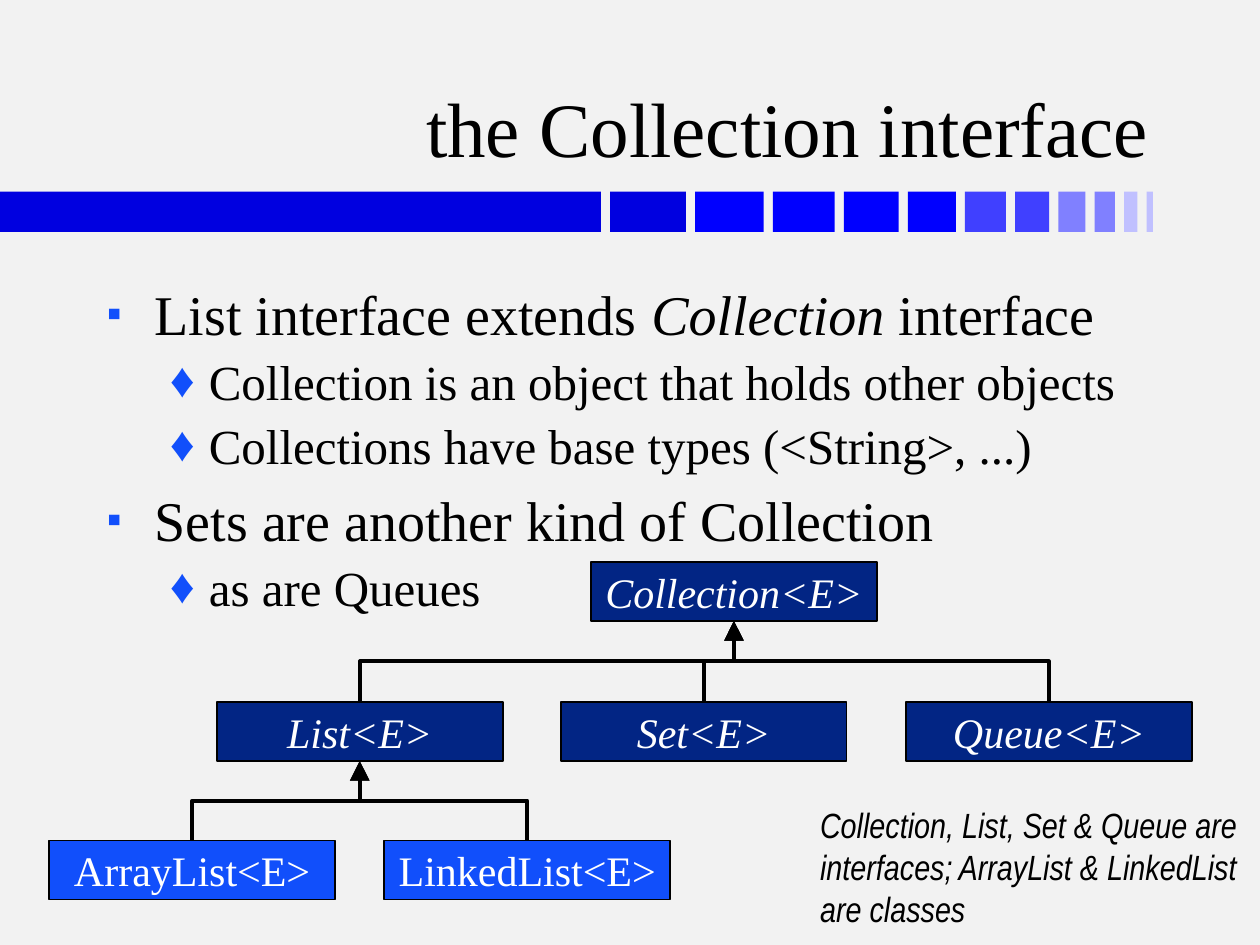
"""Build a slide on the Collection interface with its type hierarchy."""
from lxml.etree import SubElement
from pptx import Presentation
from pptx.dml.color import RGBColor
from pptx.enum.shapes import MSO_CONNECTOR as CONN, MSO_SHAPE as SHAPE
from pptx.enum.text import MSO_ANCHOR as ANCHOR, PP_ALIGN as ALIGN
from pptx.oxml.ns import qn
from pptx.util import Inches, Pt

COLORS = {
    "paper": "F2F2F2", "ink": "000000", "white": "FFFFFF",
    "interface": "022584", "class": "114FFB", "bullet": "114FFB",
    "bar1": "0000E0", "bar2": "0000FF", "bar3": "4040FF",
    "bar4": "8080FF", "bar5": "C0C0FF",
}
SERIF, NARROW = "Times New Roman", "Arial Narrow"

prs = Presentation()
prs.slide_width, prs.slide_height = Inches(10), Inches(7.5)
COL, ROW = prs.slide_width / 100, prs.slide_height / 75
s = prs.slides.add_slide(prs.slide_layouts[6])
s.background.fill.solid()
s.background.fill.fore_color.rgb = RGBColor.from_string(COLORS["paper"])


def add_run(p, text, size, font=SERIF, color="ink", italic=False):
    r = p.add_run()
    r.text = text
    r.font.size, r.font.name, r.font.italic = Pt(size), font, italic
    r.font.color.rgb = RGBColor.from_string(COLORS[color])


def add_rect(col, row, cols, rows, color):
    sp = s.shapes.add_shape(SHAPE.RECTANGLE, int(col * COL), int(row * ROW),
                            int(cols * COL), int(rows * ROW))
    sp.shadow.inherit = False
    sp.fill.solid()
    sp.fill.fore_color.rgb = RGBColor.from_string(COLORS[color])
    sp.line.fill.background()
    return sp


BAR_END, FIRST_BAR = 91.5, 47.7
bar_colors = ["bar1"] + ["bar2"] * 4 + ["bar3"] * 2 + ["bar4"] * 2 + ["bar5"] * 2
bar_widths = [6 - 0.55 * i for i in range(len(bar_colors))]
bar_gap = (BAR_END - FIRST_BAR - sum(bar_widths)) / len(bar_widths)
add_rect(0, 15.2, FIRST_BAR, 3.2, "bar1")
left = FIRST_BAR + bar_gap
for width, color in zip(bar_widths, bar_colors):
    add_rect(left, 15.2, width, 3.2, color)
    left += width + bar_gap

frames = []
for col, row, cols, rows in [(7.4, 1.9, 84.8, 12.3), (7.5, 21.7, 85, 45),
                             (64.1, 63.3, 35.9, 11.1)]:
    tb = s.shapes.add_textbox(int(col * COL), int(row * ROW),
                              int(cols * COL), int(rows * ROW))
    tb.text_frame.word_wrap = True
    frames.append(tb.text_frame)
title, body, note = frames

title.vertical_anchor = ANCHOR.BOTTOM
title.paragraphs[0].alignment = ALIGN.RIGHT
add_run(title.paragraphs[0], "the Collection interface", 44)
add_run(note.paragraphs[0],
        "Collection, List, Set & Queue are interfaces; ArrayList & LinkedList are classes",
        20, NARROW, italic=True)

levels = [(32, 0.38, 0.38, "20000", "75000", "▪"),
          (28, 0.81, 0.31, "10000", "100000", "♦")]
points = [
    (0, [("List interface extends ", False), ("Collection", True), (" interface", False)]),
    (1, [("Collection is an object that holds other objects", False)]),
    (1, [("Collections have base types (<String>, ...)", False)]),
    (0, [("Sets are another kind of Collection", False)]),
    (1, [("as are Queues", False)]),
]
for i, (level, runs) in enumerate(points):
    size, margin, hang, before, scale, mark = levels[level]
    p = body.add_paragraph() if i else body.paragraphs[0]
    p.level = level
    pPr = p._p.get_or_add_pPr()
    pPr.set("marL", str(Inches(margin)))
    pPr.set("indent", str(-Inches(hang)))
    SubElement(SubElement(pPr, qn("a:spcBef")), qn("a:spcPct"), val=before)
    SubElement(SubElement(pPr, qn("a:buClr")), qn("a:srgbClr"), val=COLORS["bullet"])
    SubElement(pPr, qn("a:buSzPct"), val=scale)
    SubElement(pPr, qn("a:buFont"), typeface=SERIF)
    SubElement(pPr, qn("a:buChar"), char=mark)
    for text, italic in runs:
        add_run(p, text, size, italic=italic)

BOX_W, BOX_H = 22.7, 4.7
types = {
    "Collection": (46.9, 44.6, "interface"),
    "List": (17.2, 55.7, "interface"),
    "Set": (44.5, 55.7, "interface"),
    "Queue": (71.9, 55.7, "interface"),
    "ArrayList": (3.9, 66.7, "class"),
    "LinkedList": (30.5, 66.7, "class"),
}
for name, (col, row, kind) in types.items():
    sp = add_rect(col, row, BOX_W, BOX_H, kind)
    sp.line.color.rgb = RGBColor.from_string(COLORS["ink"])
    sp.line.width = Pt(1)
    tf = sp.text_frame
    tf.word_wrap = False
    tf.vertical_anchor = ANCHOR.MIDDLE
    p = tf.paragraphs[0]
    p.alignment = ALIGN.CENTER
    p.space_before = Pt(7)
    add_run(p, f"{name}<E>", 24, color="white", italic=kind == "interface")

extends = [("Collection", "List"), ("Collection", "Set"), ("Collection", "Queue"),
           ("List", "ArrayList"), ("List", "LinkedList")]
for parent, child in extends:
    x1, x2 = (types[name][0] + BOX_W / 2 for name in (parent, child))
    y1, y2 = types[parent][1] + BOX_H, types[child][1]
    mid_x, mid_y = (x1 + x2) / 2, (y1 + y2) / 2
    half_w, half_h = (y2 - y1) / 2, abs(x2 - x1) / 2
    side = 1 if x2 < x1 else -1
    c = s.shapes.add_connector(
        CONN.ELBOW, int((mid_x - side * half_w) * COL), int((mid_y - half_h) * ROW),
        int((mid_x + side * half_w) * COL), int((mid_y + half_h) * ROW))
    c.line.color.rgb = RGBColor.from_string(COLORS["ink"])
    c.line.width = Pt(2.25)
    spPr = c._element.spPr
    spPr.find(qn("a:xfrm")).set("rot", "5400000" if side == 1 else "16200000")
    SubElement(spPr.find(qn("a:ln")), qn("a:headEnd"), type="triangle", w="lg", len="lg")
    SubElement(spPr, qn("a:effectLst"))

prs.save("out.pptx")
